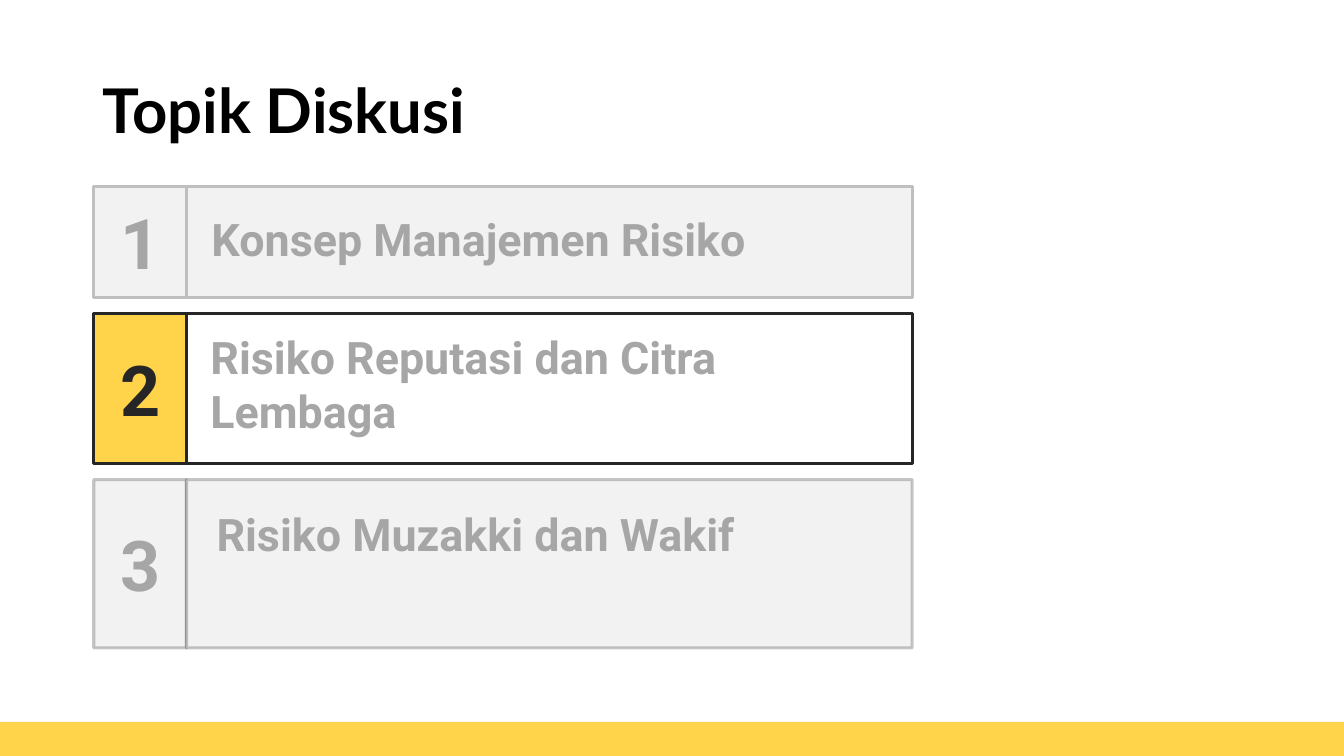
from dataclasses import dataclass

from lxml import etree
from pptx import Presentation
from pptx.dml.color import RGBColor
from pptx.enum.shapes import MSO_SHAPE
from pptx.enum.text import MSO_ANCHOR, PP_ALIGN
from pptx.oxml.ns import qn
from pptx.util import Pt

RECTANGLE = MSO_SHAPE.RECTANGLE
MIDDLE = MSO_ANCHOR.MIDDLE
TOP = MSO_ANCHOR.TOP
LEFT = PP_ALIGN.LEFT
CENTER = PP_ALIGN.CENTER

BLACK = RGBColor(0x00, 0x00, 0x00)
WHITE = RGBColor(0xFF, 0xFF, 0xFF)
YELLOW = RGBColor(0xFF, 0xD4, 0x4B)
INK = RGBColor(0x26, 0x26, 0x26)
PALE = RGBColor(0xF2, 0xF2, 0xF2)
SILVER = RGBColor(0xBF, 0xBF, 0xBF)
MUTED = RGBColor(0xA6, 0xA6, 0xA6)

SLIDE_WIDTH, SLIDE_HEIGHT = 960, 540
FOOTER_HEIGHT = 24.4
NUMBER_WIDTH, TOPIC_WIDTH = 66.2, 518.4
TOPICS_LEFT, TOPICS_TOP, TOPIC_GAP = 67, 133.2, 11.8


@dataclass
class Topic:
    """One topic with its row height, label offset and colours."""
    label: str
    height: float
    label_dx: float
    label_dy: float
    label_height: float
    number_fill: RGBColor = PALE
    fill: RGBColor = PALE
    number_color: RGBColor = MUTED
    border: RGBColor = SILVER
    border_opacity: int = 100


TOPICS = [
    Topic("Konsep Manajemen Risiko", 79.2, 77, 14.4, 46),
    Topic("Risiko Reputasi dan Citra Lembaga", 106.6, 76.3, 7.9, 85,
          YELLOW, WHITE, INK, INK),
    Topic("Risiko Muzakki dan Wakif", 120.2, 80.6, 15.8, 46,
          border=INK, border_opacity=25),
]


def write(frame, text, font, size, color, anchor=TOP, align=LEFT):
    """Fill a text frame with one bold paragraph and return it."""
    frame.word_wrap = True
    frame.vertical_anchor = anchor
    frame.text = text
    paragraph = frame.paragraphs[0]
    paragraph.alignment = align
    style = paragraph.runs[0].font
    style.name, style.size, style.bold = font, Pt(size), True
    style.color.rgb = color
    return paragraph


def add_panel(slide, box, fill, border=None, opacity=100):
    """Add a flat rectangle with an optional border."""
    panel = slide.shapes.add_shape(RECTANGLE, *map(Pt, box))
    panel.shadow.inherit = False
    panel.fill.solid()
    panel.fill.fore_color.rgb = fill
    if border is None:
        panel.line.fill.background()
        return panel
    panel.line.color.rgb = border
    panel.line.width = Pt(2.25)
    if opacity < 100:
        color = panel.line._get_or_add_ln().find(".//" + qn("a:srgbClr"))
        etree.SubElement(color, qn("a:alpha"), val=str(opacity * 1000))
    return panel


def add_title(slide, box, text):
    """Add the slide title, centred vertically in its box."""
    title = slide.shapes.add_textbox(*map(Pt, box))
    write(title.text_frame, text, "Lato", 44, BLACK, MIDDLE).line_spacing = 0.9


def add_topic(slide, box, number, topic):
    """Add a numbered topic row inside the box."""
    left, top, width, height = box
    border = topic.border, topic.border_opacity
    number_cell = add_panel(slide, (left, top, NUMBER_WIDTH, height),
                            topic.number_fill, *border)
    write(number_cell.text_frame, str(number), "Roboto", 50,
          topic.number_color, MIDDLE, CENTER)
    add_panel(slide, (left + NUMBER_WIDTH, top, width - NUMBER_WIDTH, height),
              topic.fill, *border)
    label = slide.shapes.add_textbox(
        Pt(left + topic.label_dx), Pt(top + topic.label_dy),
        Pt(486.7), Pt(topic.label_height))
    write(label.text_frame, topic.label, "Roboto", 32, MUTED)


def add_topics(slide, left, top):
    """Stack the topic rows with equal gaps."""
    for number, topic in enumerate(TOPICS, 1):
        box = (left, top, NUMBER_WIDTH + TOPIC_WIDTH, topic.height)
        add_topic(slide, box, number, topic)
        top += topic.height + TOPIC_GAP


def main():
    """Build the discussion topics slide and save it."""
    deck = Presentation()
    deck.slide_width, deck.slide_height = Pt(SLIDE_WIDTH), Pt(SLIDE_HEIGHT)
    slide = deck.slides.add_slide(deck.slide_layouts[6])
    add_title(slide, (66.2, 28.8, 828, 104.4), "Topik Diskusi")
    add_topics(slide, TOPICS_LEFT, TOPICS_TOP)
    add_panel(slide, (0, SLIDE_HEIGHT - FOOTER_HEIGHT, SLIDE_WIDTH,
                      FOOTER_HEIGHT), YELLOW)
    deck.save("out.pptx")


if __name__ == "__main__":
    main()
